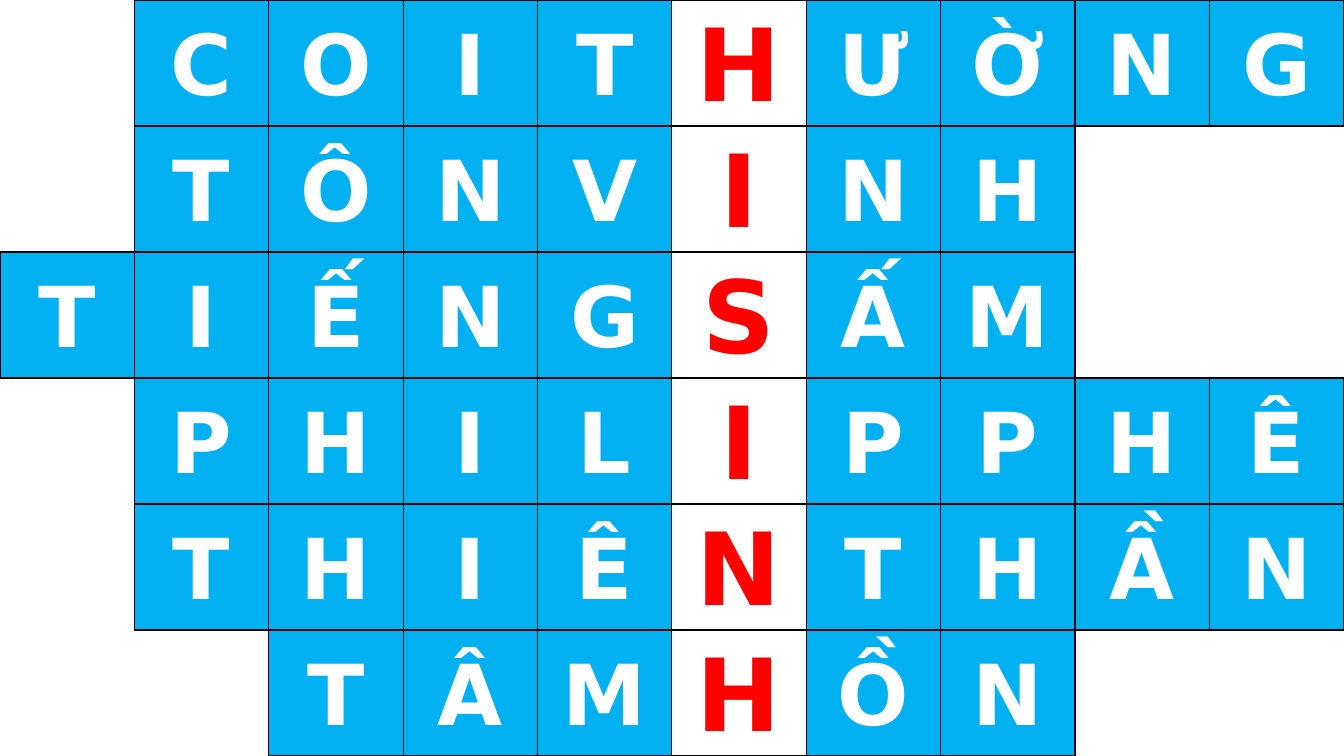
"""Build a crossword slide whose highlighted column spells the key word."""
import dataclasses

import lxml.etree
import pptx
import pptx.dml.color
import pptx.enum.text
import pptx.oxml.ns
import pptx.util


@dataclasses.dataclass(frozen=True)
class Theme:
    font: str = "DejaVu Sans"
    tile: str = "00B0F0"
    letter: str = "FFFFFF"
    key_tile: str = "FFFFFF"
    key_letter: str = "FF0000"
    border: str = "000000"
    letter_size: int = 60
    key_size: int = 72
    border_width: int = 1


ANSWERS = [
    (1, "COITHƯỜNG"),
    (1, "TÔNVINH"),
    (0, "TIẾNGSẤM"),
    (1, "PHILIPPHÊ"),
    (1, "THIÊTHẦN"),
    (2, "TÂMHỒN"),
]
ANSWERS[4] = (1, "THIÊNTHẦN")
COLUMNS = 10
KEY_COLUMN = 5
SIDES = {"L": (0, -1), "R": (0, 1), "T": (-1, 0), "B": (1, 0)}


class Crossword:
    def __init__(self, slide, theme):
        self.slide = slide
        self.theme = theme

    def add_grid(self, answers, width, height):
        letters = {
            (row, start + i): letter
            for row, (start, word) in enumerate(answers)
            for i, letter in enumerate(word)
        }
        table = self.slide.shapes.add_table(
            len(answers), COLUMNS, 0, 0, width, height).table
        table.first_row = table.horz_banding = False
        for row in range(len(answers)):
            for col in range(COLUMNS):
                cell = table.cell(row, col)
                for side, (down, right) in SIDES.items():
                    neighbour = (row + down, col + right)
                    self.add_border(cell, side, (row, col) in letters or neighbour in letters)
                if (row, col) in letters:
                    self.add_letter(cell, letters[row, col], col == KEY_COLUMN)
                else:
                    cell.fill.background()

    def add_border(self, cell, side, visible):
        qn = pptx.oxml.ns.qn
        tcPr = cell._tc.get_or_add_tcPr()
        ln = lxml.etree.SubElement(tcPr, qn(f"a:ln{side}"))
        if visible:
            ln.set("w", str(pptx.util.Pt(self.theme.border_width)))
            fill = lxml.etree.SubElement(ln, qn("a:solidFill"))
            lxml.etree.SubElement(fill, qn("a:srgbClr"), val=self.theme.border)
        else:
            lxml.etree.SubElement(ln, qn("a:noFill"))

    def add_letter(self, cell, letter, is_key):
        theme = self.theme
        rgb = pptx.dml.color.RGBColor.from_string
        cell.fill.solid()
        cell.fill.fore_color.rgb = rgb(theme.key_tile if is_key else theme.tile)
        cell.vertical_anchor = pptx.enum.text.MSO_ANCHOR.MIDDLE
        cell.margin_left = cell.margin_right = pptx.util.Inches(0.07)
        cell.margin_top = cell.margin_bottom = 0
        p = cell.text_frame.paragraphs[0]
        p.text = letter
        p.alignment = pptx.enum.text.PP_ALIGN.CENTER
        p.line_spacing = 1.07
        p.space_after = pptx.util.Pt(8)
        r = p.runs[0]
        r.font.name = theme.font
        r.font.bold = True
        r.font.size = pptx.util.Pt(theme.key_size if is_key else theme.letter_size)
        r.font.color.rgb = rgb(theme.key_letter if is_key else theme.letter)


def main():
    prs = pptx.Presentation()
    prs.slide_width = pptx.util.Inches(13.33)
    prs.slide_height = pptx.util.Inches(7.5)
    s = prs.slides.add_slide(prs.slide_layouts[6])
    Crossword(s, Theme()).add_grid(ANSWERS, prs.slide_width, prs.slide_height)
    prs.save("out.pptx")


if __name__ == "__main__":
    main()
